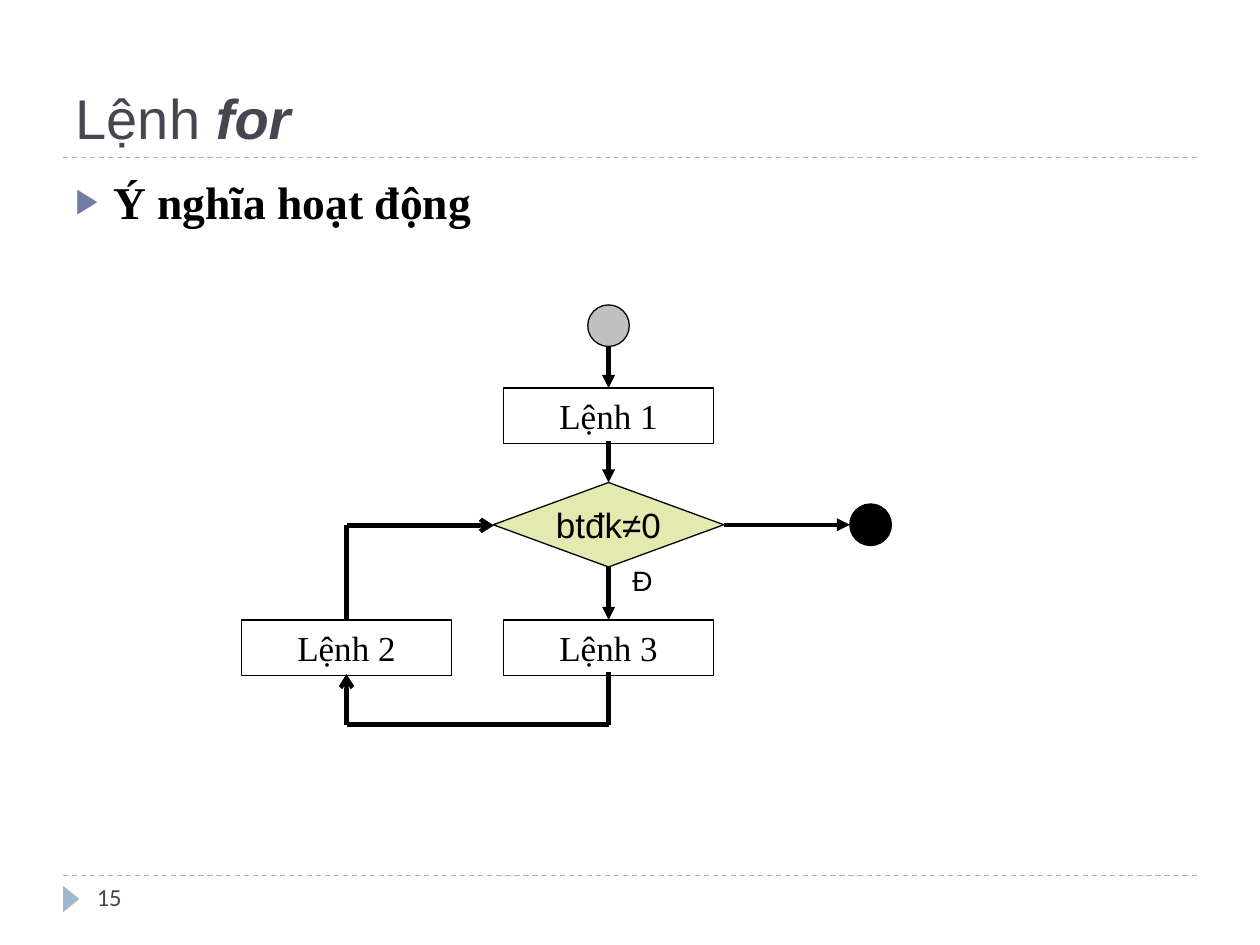
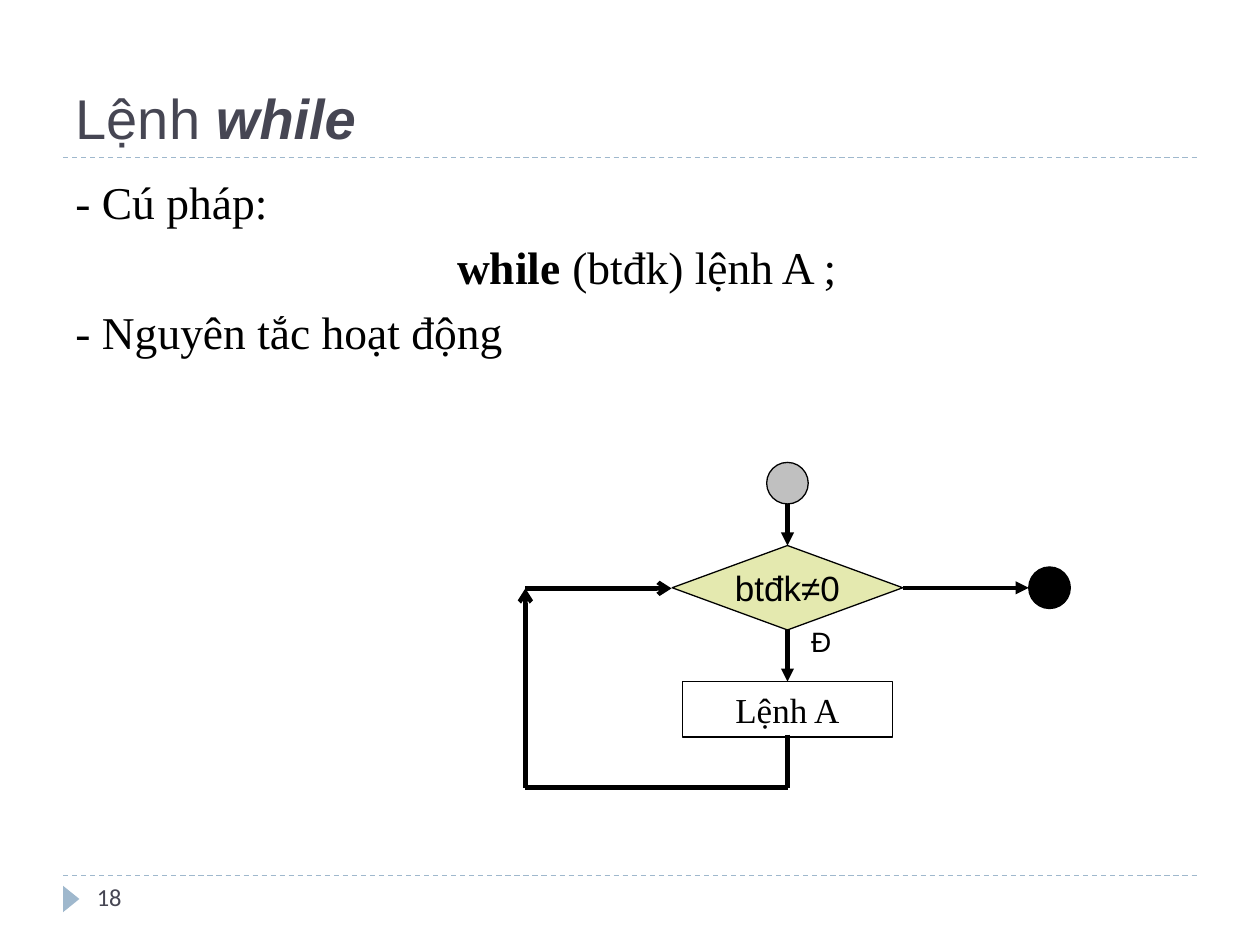
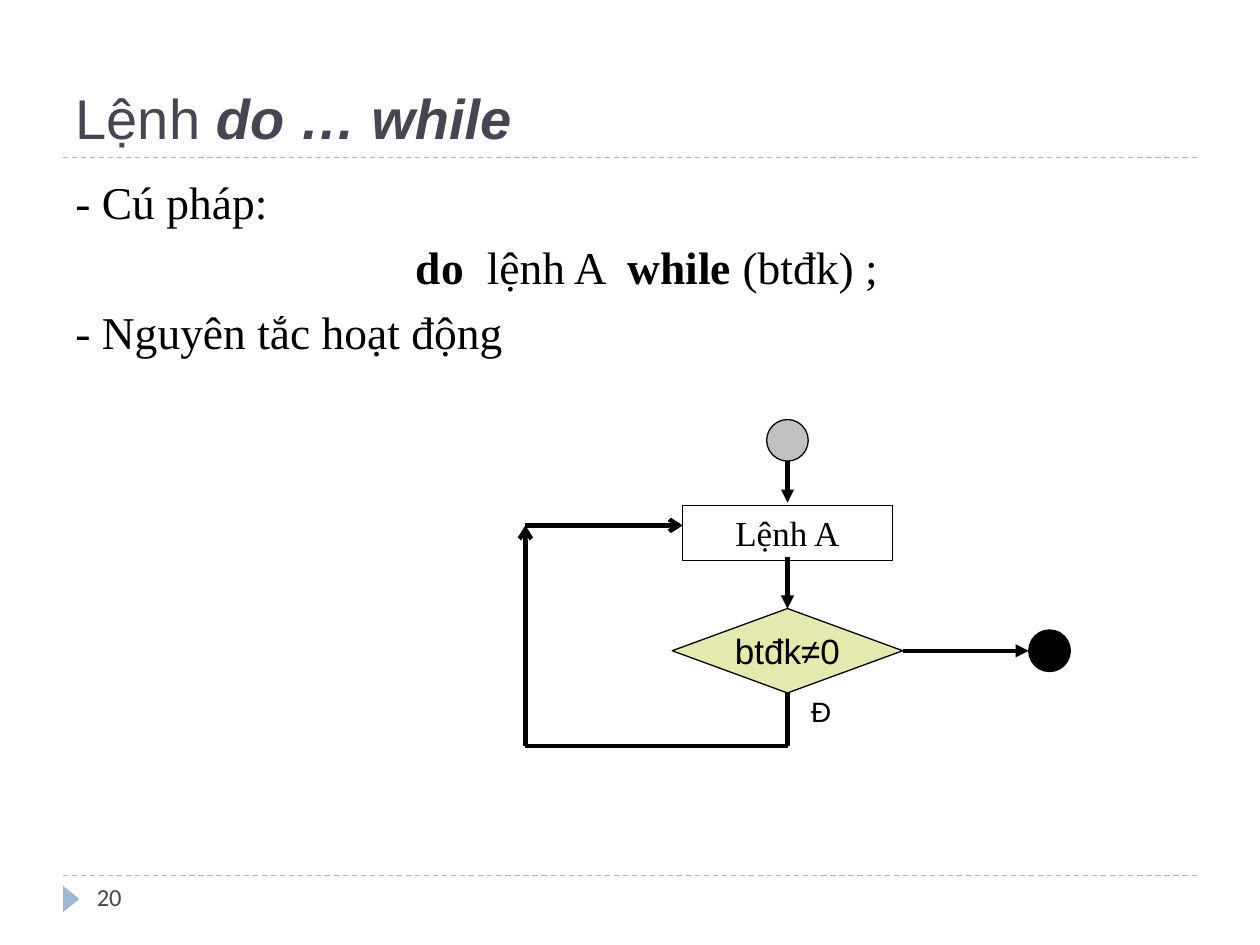
from pptx import Presentation
from pptx import util as u
from pptx.dml.color import RGBColor
from pptx.enum import dml, shapes, text
from pptx.oxml.ns import qn
from lxml import etree

# Shared look
INK, TITLE, ACCENT = "000000", "464653", "9FB8CD"
BULLET, START, CHOICE = "727CA3", "C0C0C0", "E4E9AF"
SANS, SERIF, SMALL = "Arial", "Times New Roman", "Calibri"
SIDE = 2.08  # distance from the main axis to the loop and exit columns
DOT, BOX, DIAMOND = (0.33, 0.33), (1.67, 0.44), (1.83, 0.67)
color = RGBColor.from_string


def write(para, marked, font, size, tint=INK):
    """Fill a paragraph; the parts between bars are bold."""
    for index, part in enumerate(marked.split("|")):
        if part:
            span = para.add_run()
            span.text = part
            span.font.name, span.font.size = font, u.Pt(size)
            span.font.bold = index % 2 == 1
            span.font.color.rgb = color(tint)


def connect(page, x1, y1, x2, y2, arrow=None, tint=INK, width=2.5):
    link = page.shapes.add_connector(
        shapes.MSO_CONNECTOR.STRAIGHT, *map(u.Inches, (x1, y1, x2, y2)))
    link.line.color.rgb, link.line.width = color(tint), u.Pt(width)
    properties = link._element.spPr
    if arrow:
        etree.SubElement(properties.find(qn("a:ln")), qn("a:tailEnd"), type=arrow)
    etree.SubElement(properties, qn("a:effectLst"))
    return link


# Slide contents: boxes are (label, offset from axis, top);
# links are (offset, y, offset, y, arrowhead)
slides = [
    dict(number="15", title="Lệnh |for", body=["|Ý nghĩa hoạt động"], bullet=True,
         axis=4.83, start=2.42, choice=3.83, yes=4.42,
         boxes=[("Lệnh 1", 0, 3.08), ("Lệnh 2", -SIDE, 4.92), ("Lệnh 3", 0, 4.92)],
         links=[(0, 3.5, 0, 3.83, "triangle"), (0, 4.5, 0, 4.92, "triangle"),
                (0, 5.33, 0, 5.75, None), (0, 5.75, -SIDE, 5.75, None),
                (-SIDE, 5.75, -SIDE, 5.35, "arrow"), (-SIDE, 4.92, -SIDE, 4.17, None),
                (-SIDE, 4.17, -0.91, 4.17, "arrow")]),
    dict(number="18", title="Lệnh |while", bullet=False,
         body=["- Cú pháp:", "|while| (btđk) lệnh A ;", "- Nguyên tắc hoạt động"],
         axis=6.25, start=3.67, choice=4.33, yes=4.91,
         boxes=[("Lệnh A", 0, 5.41)],
         links=[(0, 5, 0, 5.41, "triangle"), (0, 5.83, 0, 6.25, None),
                (0, 6.25, -SIDE, 6.25, None), (-SIDE, 6.25, -SIDE, 4.67, "arrow"),
                (-SIDE, 4.67, -0.92, 4.67, "arrow")]),
    dict(number="20", title="Lệnh |do … while", bullet=False,
         body=["- Cú pháp:", "|do|  lệnh A  |while| (btđk) ;", "- Nguyên tắc hoạt động"],
         axis=6.25, start=3.33, choice=4.83, yes=5.46,
         boxes=[("Lệnh A", 0, 4.01)],
         links=[(0, 4.42, 0, 4.83, "triangle"), (0, 5.5, 0, 5.92, None),
                (0, 5.92, -SIDE, 5.92, None), (-SIDE, 5.92, -SIDE, 4.17, "arrow"),
                (-SIDE, 4.17, -0.83, 4.17, "arrow")]),
]

deck = Presentation()
deck.slide_width, deck.slide_height = u.Inches(10), u.Inches(7.5)

for content in slides:
    page = deck.slides.add_slide(deck.slide_layouts[5])
    axis = content["axis"]

    # Rules and footer marker
    for y in (6.95, 1.25):
        rule = connect(page, 0.5, y, 9.5, y, tint=ACCENT, width=0.75)
        rule.line.dash_style = dml.MSO_LINE.DASH
    marker = page.shapes.add_shape(
        shapes.MSO_SHAPE.ISOSCELES_TRIANGLE, *map(u.Inches, (0.46, 7.07, 0.21, 0.13)))
    marker.rotation = 90
    marker.shadow.inherit = False
    marker.fill.solid()
    marker.fill.fore_color.rgb = color(ACCENT)
    marker.line.fill.background()

    # Title
    title = page.shapes.title
    title.left, title.top, title.width, title.height = map(u.Inches, (0.5, 0.17, 9, 1.08))
    frame = title.text_frame
    frame.auto_size = text.MSO_AUTO_SIZE.NONE
    frame.vertical_anchor = text.MSO_ANCHOR.BOTTOM
    para = frame.paragraphs[0]
    para.alignment = text.PP_ALIGN.LEFT
    write(para, content["title"], SANS, 32, TITLE)
    para.runs[-1].font.italic = True

    # Page number, body and branch label
    frames = []
    for area in ((0.67, 6.95, 2.17, 0.4), (0.5, 1.33, 9, 5.4),
                 (axis + 0.09, content["yes"], 0.33, 0.37)):
        frame = page.shapes.add_textbox(*map(u.Inches, area)).text_frame
        frame.word_wrap = True
        frames.append(frame)
    number, body, branch = frames
    write(number.paragraphs[0], content["number"], SMALL, 14, TITLE)
    write(branch.paragraphs[0], "Đ", SANS, 16)
    branch.paragraphs[0].alignment = text.PP_ALIGN.CENTER

    for index, line in enumerate(content["body"]):
        para = body.add_paragraph() if index else body.paragraphs[0]
        para.space_before = u.Pt(6)
        write(para, line, SERIF, 26)
        settings = para._p.get_or_add_pPr()
        if index == 1:
            para.alignment = text.PP_ALIGN.CENTER
            settings.set("marL", str(u.Inches(0.27)))
        if content["bullet"]:
            settings.set("marL", str(u.Inches(0.3)))
            settings.set("indent", str(-u.Inches(0.3)))
            tint = etree.SubElement(settings, qn("a:buClr"))
            etree.SubElement(tint, qn("a:srgbClr"), val=BULLET)
            etree.SubElement(settings, qn("a:buSzPct"), val="76000")
            etree.SubElement(settings, qn("a:buFont"), typeface=SANS)
            etree.SubElement(settings, qn("a:buChar"), char="▶")

    # Flowchart nodes
    kinds = shapes.MSO_SHAPE
    middle = content["choice"] + DIAMOND[1] / 2
    nodes = [(kinds.RECTANGLE, offset, top, BOX, None, label, SERIF)
             for label, offset, top in content["boxes"]]
    nodes += [(kinds.OVAL, 0, content["start"], DOT, START, "", SANS),
              (kinds.OVAL, SIDE, middle - DOT[1] / 2, DOT, INK, "", SANS),
              (kinds.FLOWCHART_DECISION, 0, content["choice"], DIAMOND, CHOICE, "btđk≠0", SANS)]
    for kind, offset, top, (width, height), fill, label, font in nodes:
        node = page.shapes.add_shape(
            kind, *map(u.Inches, (axis + offset - width / 2, top, width, height)))
        node.shadow.inherit = False
        if fill:
            node.fill.solid()
            node.fill.fore_color.rgb = color(fill)
        else:
            node.fill.background()
        node.line.color.rgb, node.line.width = color(INK), u.Pt(0.75)
        if label:
            frame = node.text_frame
            frame.word_wrap = kind == kinds.RECTANGLE
            frame.vertical_anchor = text.MSO_ANCHOR.MIDDLE
            frame.paragraphs[0].alignment = text.PP_ALIGN.CENTER
            write(frame.paragraphs[0], label, font, 20)

    # Flowchart arrows: entry, exit, then the loop
    below = content["start"] + DOT[1]
    entry = (0, below, 0, below + 0.33, "triangle")
    leave = (DIAMOND[0] / 2, middle, SIDE - DOT[0] / 2, middle, "triangle")
    for x1, y1, x2, y2, arrow in [entry, leave] + content["links"]:
        connect(page, axis + x1, y1, axis + x2, y2, arrow)

deck.save("out.pptx")
